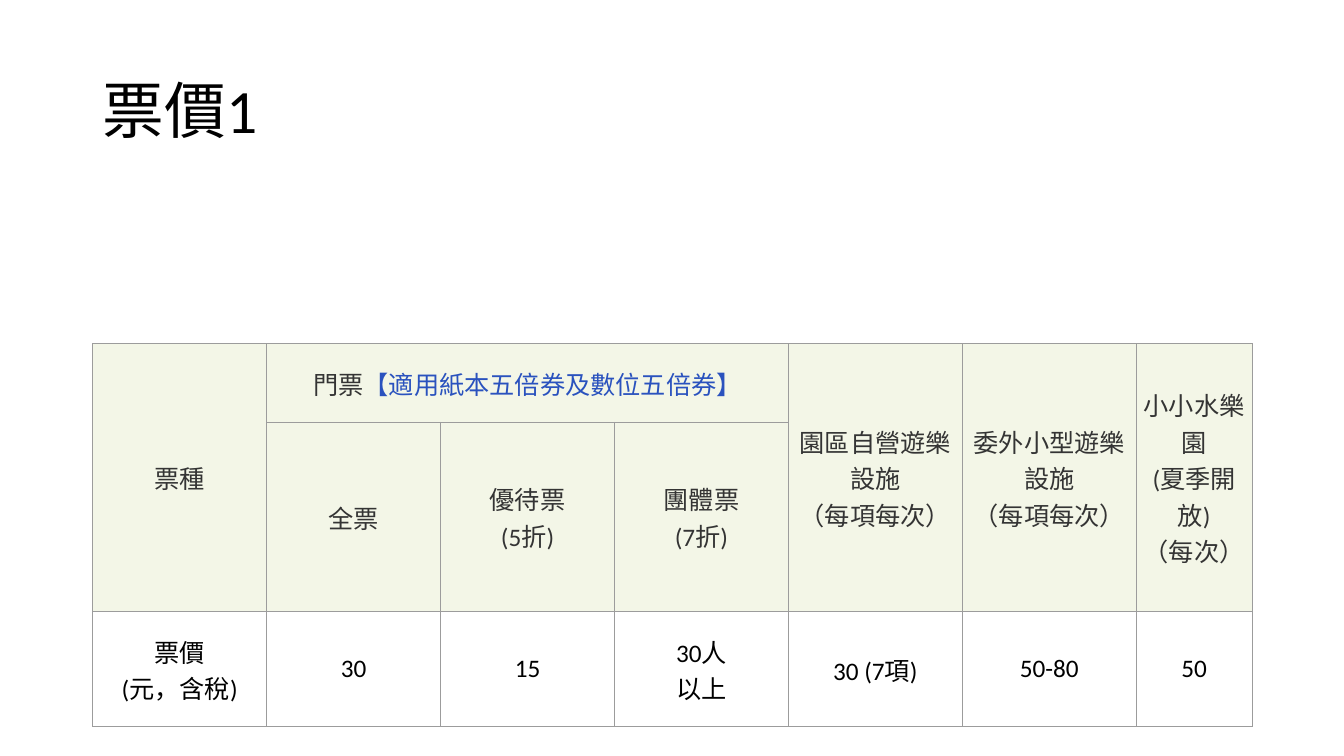
"""Build the ticket price slide with its merged-header table."""
from pptx import Presentation
from pptx.dml.color import RGBColor
from pptx.enum.text import MSO_ANCHOR, PP_ALIGN
from pptx.oxml import parse_xml
from pptx.oxml.ns import nsdecls
from pptx.util import Inches, Pt

BLACK = RGBColor(0x00, 0x00, 0x00)
GREY = RGBColor(0x34, 0x34, 0x34)
BLUE = RGBColor(0x2A, 0x52, 0xBE)
WHITE = RGBColor(0xFF, 0xFF, 0xFF)
CREAM = RGBColor(0xF3, 0xF6, 0xE7)
BORDER = RGBColor(0x9C, 0x9C, 0x9C)


def add_text(p, text, size=18, color=GREY, align=PP_ALIGN.CENTER):
    p.alignment = align
    for i, line in enumerate(text.split("\n")):
        if i:
            p.add_line_break()
        r = p.add_run()
        r.text = line
        r.font.name = "Calibri"
        r.font.size = Pt(size)
        r.font.color.rgb = color


def set_borders(cell):
    tcPr = cell._tc.get_or_add_tcPr()
    for side in ("lnL", "lnR", "lnT", "lnB"):
        tcPr.append(parse_xml(
            f'<a:{side} {nsdecls("a")} w="{Pt(0.75)}"><a:solidFill>'
            f'<a:srgbClr val="{BORDER}"/></a:solidFill></a:{side}>'))


prs = Presentation()
prs.slide_width = Inches(13.33)
prs.slide_height = Inches(7.5)
s = prs.slides.add_slide(prs.slide_layouts[5])

title = s.shapes.title
title.left, title.top = Inches(0.92), Inches(0.4)
title.width, title.height = Inches(11.5), Inches(1.45)
tf = title.text_frame
tf.vertical_anchor = MSO_ANCHOR.MIDDLE
p = tf.paragraphs[0]
p.line_spacing = 0.9
add_text(p, "票價1", size=44, color=BLACK, align=PP_ALIGN.LEFT)

rows = [
    ["票種", "門票", "", "", "園區自營遊樂設施\n（每項每次）",
     "委外小型遊樂設施\n（每項每次）", "小小水樂園\n(夏季開放)\n（每次）"],
    ["", "全票", "優待票\n(5折)", "團體票\n(7折)", "", "", ""],
    ["票價\n(元，含稅)", "30", "15", "30人\n以上", "30 (7項)", "50-80", "50"],
]
col_widths = [1.725] * 6 + [1.15]
row_heights = [0.78, 1.88, 1.14]

table = s.shapes.add_table(
    len(rows), len(col_widths), Inches(0.92), Inches(3.41),
    Inches(sum(col_widths)), Inches(sum(row_heights))).table
for col, width in zip(table.columns, col_widths):
    col.width = Inches(width)
for row, height in zip(table.rows, row_heights):
    row.height = Inches(height)

for i, texts in enumerate(rows):
    is_price = i == len(rows) - 1
    for j, text in enumerate(texts):
        cell = table.cell(i, j)
        set_borders(cell)
        cell.fill.solid()
        cell.fill.fore_color.rgb = WHITE if is_price else CREAM
        cell.vertical_anchor = MSO_ANCHOR.MIDDLE
        cell.margin_left = cell.margin_right = Inches(0.03)
        cell.margin_top = cell.margin_bottom = Inches(0.03)
        if text:
            add_text(cell.text_frame.paragraphs[0], text,
                     color=BLACK if is_price else GREY)

add_text(table.cell(0, 1).text_frame.paragraphs[0],
         "【適用紙本五倍券及數位五倍券】", color=BLUE)
table.cell(0, 1).merge(table.cell(0, 3))
for j in (0, 4, 5, 6):
    table.cell(0, j).merge(table.cell(1, j))

prs.save("out.pptx")
